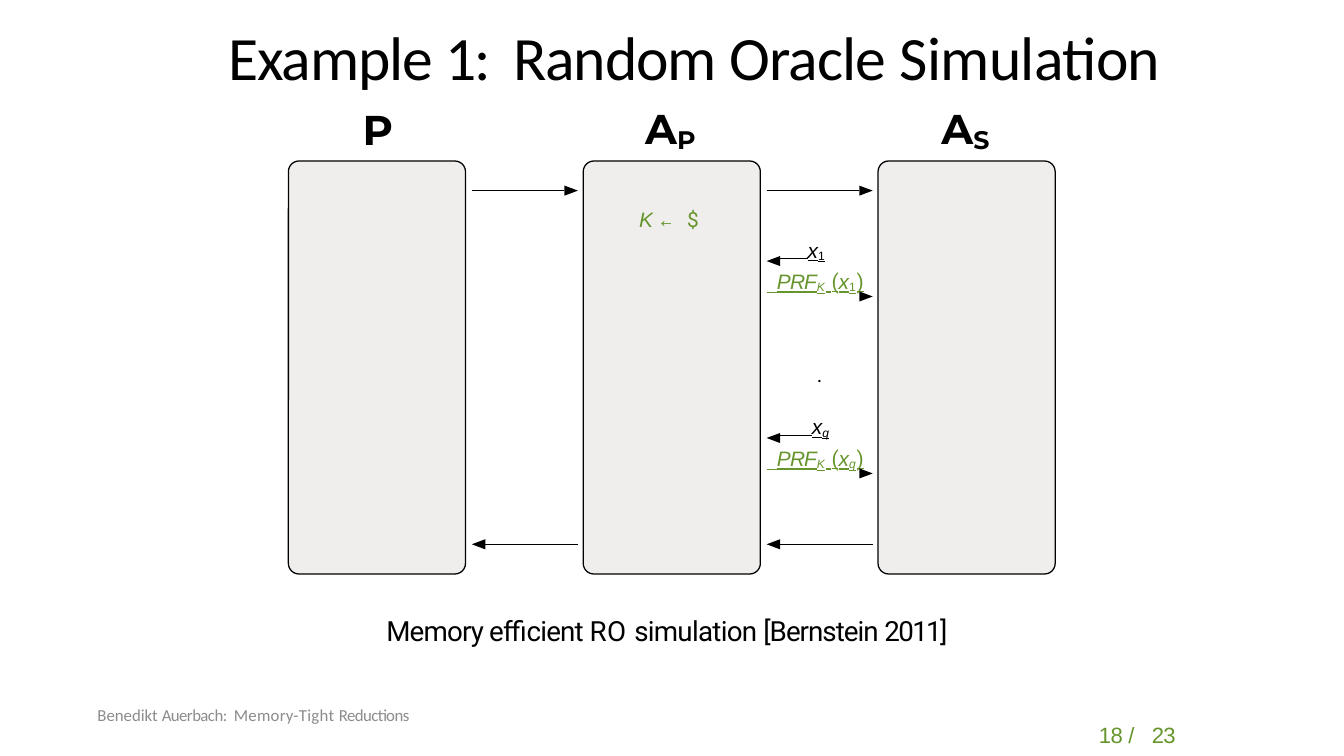
from pptx import Presentation
from pptx.dml.color import RGBColor
from pptx.enum.shapes import MSO_CONNECTOR as Connector, MSO_SHAPE as Shape
from pptx.enum.text import MSO_ANCHOR as Anchor, PP_ALIGN as Align
from pptx.oxml.ns import qn
from pptx.util import Pt
from lxml import etree

BLACK, GREEN, GREY, PANEL = "000000", "66952D", "8C8C8C", "F0EEED"
color = RGBColor.from_string

deck = Presentation()
deck.slide_width, deck.slide_height = Pt(960), Pt(540)
page = deck.slides.add_slide(deck.slide_layouts[5])


def write(box, place, runs, size, font, ink=BLACK, align=Align.LEFT, anchor=Anchor.TOP):
    """Place a text shape and fill one line with (text, tracking, font changes) runs."""
    box.left, box.top, box.width, box.height = map(Pt, place)
    frame = box.text_frame
    frame.margin_left = frame.margin_right = frame.margin_top = frame.margin_bottom = 0
    frame.word_wrap = True
    frame.vertical_anchor = anchor
    para = frame.paragraphs[0]
    para.alignment = align
    para.font.size, para.font.name = Pt(size), font
    para.font.color.rgb = color(ink)
    for text, tracking, changes in runs:
        span = para.add_run()
        span.text = text
        properties = span._r.get_or_add_rPr()
        properties.set("spc", str(round(tracking * 100)))
        for name, value in changes.items():
            if name == "baseline":
                properties.set("baseline", str(value))
            else:
                setattr(span.font, name, value)
    return para


def new_box():
    return page.shapes.add_textbox(0, 0, 0, 0)


# Title
write(page.shapes.title, (163.4, 13.7, 760, 53),
      [("Example ", -0.9, {}), ("1:", -1.8, {}), (" ", 6.3, {}), ("Random ", -0.9, {}),
       ("Oracle ", -0.6, {}), ("Simulation", -0.5, {})],
      44, "Calibri", anchor=Anchor.MIDDLE)

# Party panels with their headings
STEP, PANEL_LEFT, PANEL_WIDTH = 210.6, 206, 126.5
headings = [("P", "", 259, 74.2), ("A", "P", 460.8, 72), ("A", "S", 672.5, 72)]
for column, (letter, subscript, left, top) in enumerate(headings):
    panel = page.shapes.add_shape(Shape.ROUNDED_RECTANGLE, Pt(PANEL_LEFT + column * STEP),
                                  Pt(115), Pt(PANEL_WIDTH), Pt(295))
    panel.adjustments[0] = 0.06
    panel.shadow.inherit = False
    panel.fill.solid()
    panel.fill.fore_color.rgb = color(PANEL)
    panel.line.color.rgb = color(BLACK)
    panel.line.width = Pt(0.9)
    runs = [(letter, -1.5, {})]
    if subscript:
        runs.append((subscript, -0.7, {"size": Pt(31.2), "baseline": -11000}))
    write(new_box(), (left, top, 60, 36), runs, 29.7, "Montserrat").font.bold = True

# Arrow lines as (from x, to x, y, colour) and heads as (tip x, y, direction)
GAP_LEFT, GAP_WIDTH, HEAD = 337, 75.8, 9.6
lines, heads = [], []
for gap in range(2):
    left = GAP_LEFT + gap * STEP
    right = left + GAP_WIDTH
    lines += [(left, right - HEAD, 136.2, BLACK), (left + HEAD, right, 388.8, BLACK)]
    heads += [(right, 136.2, 1), (left, 388.8, -1)]

# Oracle queries and answers
SUB = {"italic": True, "baseline": -11000}
DIGIT = {"baseline": -11000}
ITALIC, ROBOTO = {"italic": True}, {"name": "Roboto"}
rounds = [("1", 577, DIGIT, 0), ("q", 580, SUB, 126.4)]
for index, query_left, index_style, drop in rounds:
    query = write(new_box(), (query_left, 169.4 + drop, 30, 18),
                  [("x", -0.4, ITALIC), (index, -0.5, index_style)], 14.9, "Arial")
    answer = write(new_box(), (555, 192 + drop, 72, 18),
                   [("PRF", -0.6, ITALIC), ("K", 0.5, SUB), (" ", -2, {}), ("(", 0, ROBOTO),
                    ("x", -0.4, ITALIC), (index, 0.5, index_style), (")", 0, ROBOTO)],
                   14.9, "Arial", GREEN)
    query.font.underline = answer.font.underline = True
    lines += [(left + HEAD, query_left, 184.5 + drop, BLACK),
              (left, 555, 208.8 + drop, GREEN)]
    heads += [(left, 186.5 + drop, -1), (right, 211.8 + drop, 1)]

for start, end, y, ink in lines:
    line = page.shapes.add_connector(Connector.STRAIGHT, Pt(start), Pt(y), Pt(end), Pt(y))
    line.line.color.rgb = color(ink)
    line.line.width = Pt(0.9)
    etree.SubElement(line._element.spPr, qn("a:effectLst"))

for tip, y, direction in heads:
    base = tip - direction * HEAD
    outline = page.shapes.build_freeform(Pt(base), Pt(y - 3.6))
    outline.add_line_segments([(Pt(tip), Pt(y)), (Pt(base), Pt(y + 3.6))], close=True)
    head = outline.convert_to_shape()
    head.shadow.inherit = False
    head.fill.solid()
    head.fill.fore_color.rgb = color(BLACK)
    head.line.fill.background()

# Key choice and the dot between rounds
write(new_box(), (456.6, 147.6, 70, 20),
      [("K ", 0.3, {"name": "Arial", "italic": True}),
       ("← ", 0.8, {"name": "Noto Sans Mono"}), ("$", -0.8, {})],
      14.9, "Roboto", GREEN)
write(new_box(), (545.8, 258.5, 79.2, 18), [(".", -0.4, {})], 14.9, "Roboto",
      align=Align.CENTER)

# Caption
write(new_box(), (276, 438.5, 440, 24),
      [("Memory efficient ", -0.6, {}), ("RO ", 0.4, {}), ("simulation ", -0.5, {}),
       ("[Bernstein ", -0.7, {}), ("2011]", -1.2, {})], 19.8, "Roboto")

# Footer and page number
footer = write(new_box(), (28.4, 491, 305.3, 36),
               [("Benedikt ", 0, {}), ("Auerbach:", -0.4, {}), (" ", 1.9, {}),
                ("Memory-Tight ", 0.2, {}), ("Reductions", -0.4, {})],
               12, "Calibri", GREY, Align.CENTER, Anchor.MIDDLE)
number = write(new_box(), (785, 517, 80, 18),
               [("18 ", -0.5, {}), ("/ ", 4, {}), ("23", -0.5, {})], 15.8, "Arial", GREEN)
footer.line_spacing = number.line_spacing = Pt(17.5)

deck.save("out.pptx")
